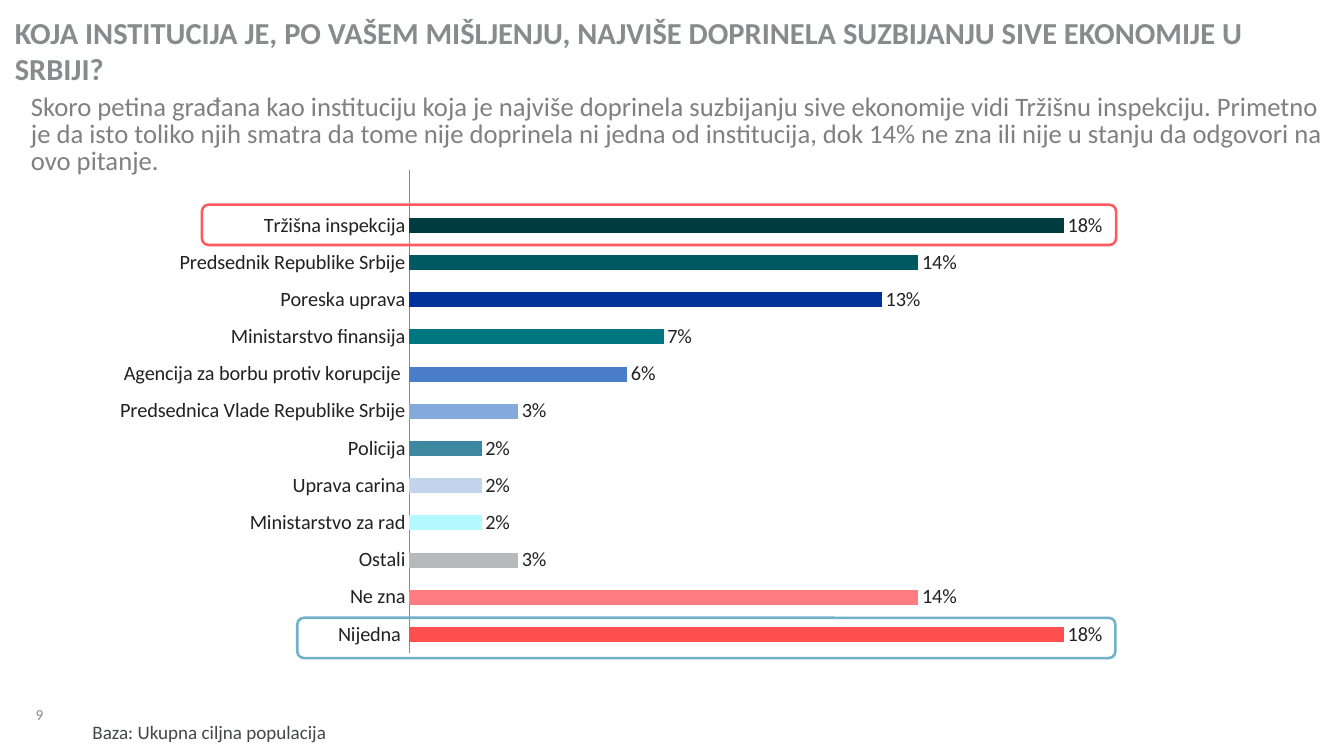
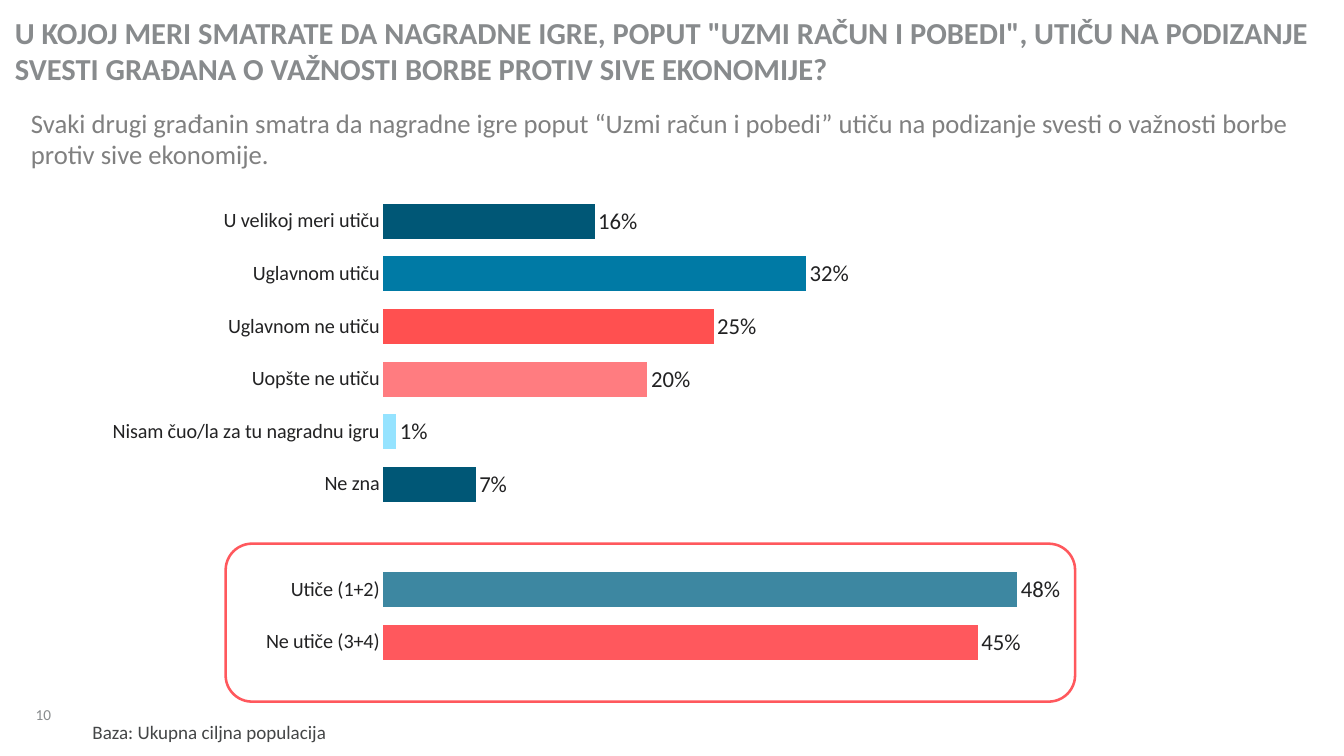
from dataclasses import dataclass
from typing import NamedTuple, Optional

from pptx import Presentation
from pptx.chart.data import CategoryChartData
from pptx.dml.color import RGBColor
from pptx.enum.chart import XL_CHART_TYPE as ChartType, XL_LABEL_POSITION as LabelPos
from pptx.enum.chart import XL_TICK_MARK as TickMark
from pptx.enum.shapes import MSO_SHAPE as Preset
from pptx.enum.text import MSO_ANCHOR as Anchor, MSO_AUTO_SIZE as AutoSize, PP_ALIGN as Align
from pptx.oxml import parse_xml
from pptx.oxml.ns import nsdecls, qn
from pptx.util import Cm, Pt


# Theme
@dataclass(frozen=True)
class Theme:
    font: str = "Calibri"
    heading: str = "888B8D"
    summary: str = "808080"
    base: str = "444647"
    chart_text: str = "222223"
    axis: str = "888B8D"
    red: str = "FF5050"
    pink: str = "FF7C80"
    coral: str = "FF585D"
    teal: str = "3D87A1"
    petrol: str = "005776"
    sky: str = "71B2C9"
    title_size: float = 24
    summary_size: float = 21
    base_size: float = 15
    number_size: float = 12
    category_size: float = 16


THEME = Theme()


class Box(NamedTuple):
    """Left, top, width and height in centimetres."""
    left: float
    top: float
    width: float
    height: float

    def lengths(self) -> list[Cm]:
        return [Cm(value) for value in self]


class Bar(NamedTuple):
    label: str = ""
    value: Optional[float] = None
    color: Optional[str] = None


class Frame(NamedTuple):
    box: Box
    color: str


@dataclass(frozen=True)
class BarChart:
    box: Box
    plot: Box  # fractions of the chart area
    bars: list[Bar]
    number_format: str
    maximum: float
    gap: int
    overlap: int = 0
    label_size: float = 16
    top_down: bool = False
    axis_line: bool = False


@dataclass(frozen=True)
class Question:
    number: int
    title: str
    summary: str
    summary_top: float
    summary_spacing: float
    chart: BarChart
    frames: list[Frame]


# Shared places
TITLE_BOX = Box(0.41, 0.89, 36.53, 1.02)
NUMBER_BOX = Box(0.99, 19.13, 1.24, 0.97)
BASE_BOX = Box(2.57, 19.08, 25.78, 1.6)
SUMMARY_LEFT, SUMMARY_WIDTH, SUMMARY_HEIGHT = 0.86, 36.07, 2.44
BASE_TEXT = "Baza: Ukupna ciljna populacija"


def rgb(color: str) -> RGBColor:
    return RGBColor.from_string(color)


def style_font(font, size: float, color: str, bold: bool = False) -> None:
    font.name, font.size, font.bold = THEME.font, Pt(size), bold
    font.color.rgb = rgb(color)


def write(shape, text: str, *, box: Box, size: float, color: str, bold: bool = False,
          spacing: float = 1.0, anchor=Anchor.MIDDLE, wrap: bool = True) -> None:
    """Place a text shape and fill it with one formatted paragraph."""
    shape.left, shape.top, shape.width, shape.height = box.lengths()
    frame = shape.text_frame
    frame.auto_size, frame.word_wrap, frame.vertical_anchor = AutoSize.NONE, wrap, anchor
    frame.margin_left = frame.margin_top = frame.margin_right = frame.margin_bottom = 0
    frame.text = text
    paragraph = frame.paragraphs[0]
    properties = paragraph._p.get_or_add_pPr()
    properties.set("marL", "0")
    properties.set("indent", "0")
    properties.append(parse_xml(f"<a:buNone {nsdecls('a')}/>"))
    paragraph.alignment = Align.LEFT
    paragraph.line_spacing = spacing
    paragraph.space_before = Pt(0)
    style_font(paragraph.runs[0].font, size, color, bold)


def set_plot_layout(chart, plot: Box) -> None:
    area = chart._chartSpace.chart.plotArea
    for layout in area.findall(qn("c:layout")):
        area.remove(layout)
    parts = "".join(f'<c:{tag} val="{value}"/>' for tag, value in zip("xywh", plot))
    area.insert(0, parse_xml(
        f'<c:layout {nsdecls("c")}><c:manualLayout><c:layoutTarget val="inner"/>'
        f'<c:xMode val="edge"/><c:yMode val="edge"/>{parts}</c:manualLayout></c:layout>'))


def draw_chart(slide, design: BarChart) -> None:
    data = CategoryChartData(number_format=design.number_format)
    data.categories = [bar.label for bar in design.bars]
    data.add_series("Series 1", [bar.value for bar in design.bars])
    chart = slide.shapes.add_chart(ChartType.BAR_CLUSTERED, *design.box.lengths(), data).chart
    chart.has_title = chart.has_legend = False
    style_font(chart.font, THEME.category_size, THEME.chart_text)
    set_plot_layout(chart, design.plot)

    # Axes
    categories, values = chart.category_axis, chart.value_axis
    categories.major_tick_mark = categories.minor_tick_mark = TickMark.NONE
    categories.has_major_gridlines = values.has_major_gridlines = False
    categories.reverse_order = design.top_down
    if design.axis_line:
        categories.format.line.color.rgb = rgb(THEME.axis)
        categories.format.line.width = Pt(0.75)
    else:
        categories.format.line.fill.background()
    values.minimum_scale, values.maximum_scale = 0, design.maximum
    values.visible = False

    # Bars and their labels
    plot = chart.plots[0]
    plot.vary_by_categories = False
    plot.gap_width, plot.overlap = design.gap, design.overlap
    plot.has_data_labels = True
    labels = plot.data_labels
    labels.show_value = True
    labels.position = LabelPos.OUTSIDE_END
    labels.number_format, labels.number_format_is_linked = design.number_format, False
    style_font(labels.font, design.label_size, THEME.chart_text)
    for index, bar in enumerate(design.bars):
        if bar.color:
            fill = plot.series[0].points[index].format.fill
            fill.solid()
            fill.fore_color.rgb = rgb(bar.color)


def draw_frame(slide, frame: Frame) -> None:
    outline = slide.shapes.add_shape(Preset.ROUNDED_RECTANGLE, *frame.box.lengths())
    outline.shadow.inherit = False
    outline.fill.background()
    outline.line.color.rgb = rgb(frame.color)
    outline.line.width = Pt(2)


def draw_question(prs, question: Question) -> None:
    slide = prs.slides.add_slide(prs.slide_layouts[1])
    title, summary = slide.placeholders
    write(title, question.title, box=TITLE_BOX, size=THEME.title_size,
          color=THEME.heading, bold=True)
    write(summary, question.summary, size=THEME.summary_size, color=THEME.summary,
          box=Box(SUMMARY_LEFT, question.summary_top, SUMMARY_WIDTH, SUMMARY_HEIGHT),
          spacing=question.summary_spacing)
    draw_chart(slide, question.chart)
    for frame in question.frames:
        draw_frame(slide, frame)

    # Footer
    number = slide.shapes.add_textbox(*NUMBER_BOX.lengths())
    write(number, str(question.number), box=NUMBER_BOX, size=THEME.number_size,
          color=THEME.heading, spacing=0.85, anchor=Anchor.BOTTOM, wrap=False)
    base = slide.shapes.add_textbox(*BASE_BOX.lengths())
    write(base, BASE_TEXT, box=BASE_BOX, size=THEME.base_size, color=THEME.base,
          spacing=0.95, anchor=Anchor.BOTTOM)


# Content
INSTITUTIONS = Question(
    number=9,
    title="KOJA INSTITUCIJA JE, PO VAŠEM MIŠLJENJU, NAJVIŠE DOPRINELA SUZBIJANJU "
          "SIVE EKONOMIJE U SRBIJI?",
    summary="Skoro petina građana kao instituciju koja je najviše doprinela suzbijanju sive "
            "ekonomije vidi Tržišnu inspekciju. Primetno je da isto toliko njih smatra da tome "
            "nije doprinela ni jedna od institucija, dok 14% ne zna ili nije u stanju da "
            "odgovori na ovo pitanje.",
    summary_top=2.54,
    summary_spacing=0.85,
    chart=BarChart(
        box=Box(2.57, 4.7, 29.31, 13.59),
        plot=Box(0.3, 0, 0.69, 0.99),
        bars=[
            Bar("Nijedna ", 0.18, THEME.red),
            Bar("Ne zna", 0.14, THEME.pink),
            Bar("Ostali", 0.03, "B8B9BB"),
            Bar("Ministarstvo za rad", 0.02, "B3F9FF"),
            Bar("Uprava carina", 0.02, "C3D4ED"),
            Bar("Policija", 0.02, THEME.teal),
            Bar("Predsednica Vlade Republike Srbije", 0.03, "86A9DC"),
            Bar("Agencija za borbu protiv korupcije ", 0.06, "4A7ECA"),
            Bar("Ministarstvo finansija", 0.07, "007681"),
            Bar("Poreska uprava", 0.13, "003399"),
            Bar("Predsednik Republike Srbije", 0.14, "005861"),
            Bar("Tržišna inspekcija", 0.18, "003B40"),
            Bar(),
        ],
        number_format="0%", maximum=0.2, gap=150, overlap=-25, axis_line=True),
    frames=[Frame(Box(8.26, 17.17, 22.73, 1.12), THEME.sky),
            Frame(Box(5.61, 5.69, 25.4, 1.12), THEME.coral)],
)

PRIZE_GAMES = Question(
    number=10,
    title='U KOJOJ MERI SMATRATE DA NAGRADNE IGRE, POPUT "UZMI RAČUN I POBEDI", UTIČU NA '
          "PODIZANJE SVESTI GRAĐANA O VAŽNOSTI BORBE PROTIV SIVE EKONOMIJE?",
    summary="Svaki drugi građanin smatra da nagradne igre poput “Uzmi račun i pobedi” utiču na "
            "podizanje svesti o važnosti borbe protiv sive ekonomije.",
    summary_top=2.67,
    summary_spacing=0.95,
    chart=BarChart(
        box=Box(1.47, 5, 27.99, 14),
        plot=Box(0.33, 0.03, 0.66, 0.94),
        bars=[
            Bar("U velikoj meri utiču", 16, THEME.petrol),
            Bar("Uglavnom utiču", 32, "007AA5"),
            Bar("Uglavnom ne utiču", 25, THEME.red),
            Bar("Uopšte ne utiču", 20, THEME.pink),
            Bar("Nisam čuo/la za tu nagradnu igru", 1, "95E3FF"),
            Bar("Ne zna", 7, THEME.petrol),
            Bar(),
            Bar("Utiče (1+2)", 48, THEME.teal),
            Bar("Ne utiče (3+4)", 45, THEME.coral),
        ],
        number_format='0"%"', maximum=50, gap=50, label_size=18, top_down=True),
    frames=[Frame(Box(6.27, 15.11, 23.6, 4.39), THEME.coral)],
)


def main() -> None:
    prs = Presentation()
    prs.slide_width, prs.slide_height = Cm(37.34), Cm(21.01)
    for question in (INSTITUTIONS, PRIZE_GAMES):
        draw_question(prs, question)
    prs.save("out.pptx")


if __name__ == "__main__":
    main()
